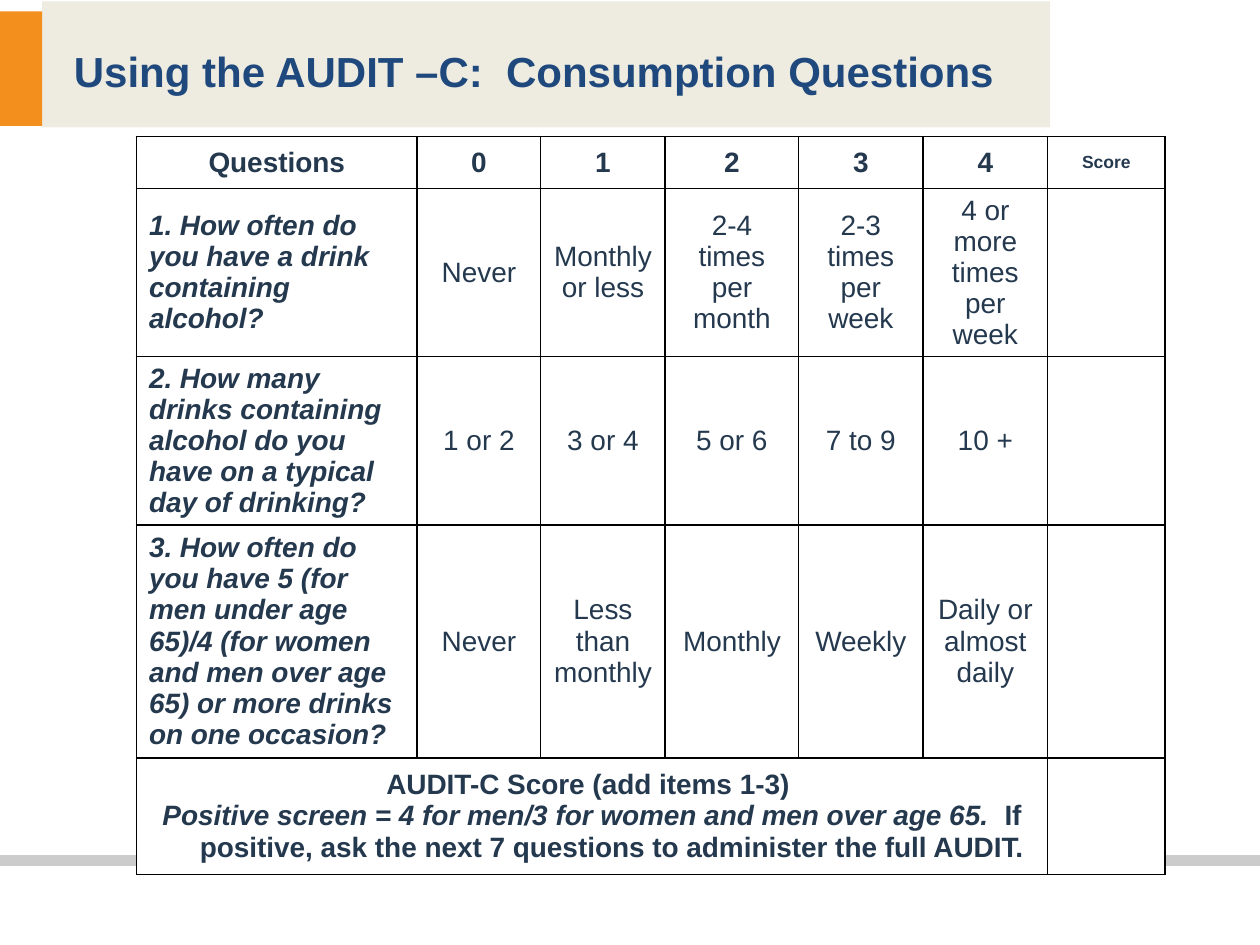
from lxml import etree
from pptx import Presentation
from pptx.dml.color import RGBColor
from pptx.enum.shapes import MSO_CONNECTOR, MSO_SHAPE
from pptx.enum.text import MSO_ANCHOR, MSO_AUTO_SIZE, PP_ALIGN
from pptx.oxml import parse_xml
from pptx.oxml.ns import nsdecls, qn
from pptx.util import Cm, Pt

LEFT, CENTER = PP_ALIGN.LEFT, PP_ALIGN.CENTER
MIDDLE = MSO_ANCHOR.MIDDLE
RECT, STRAIGHT = MSO_SHAPE.RECTANGLE, MSO_CONNECTOR.STRAIGHT
NO_FIT = MSO_AUTO_SIZE.NONE
FONT = "Arial"
HANG = Cm(0.81)
COLORS = {"rule": "CCCCCC", "mark": "F3901D", "band": "EEECE1",
          "title": "1F497D", "text": "24384E", "cell": "FFFFFF",
          "grid": "000000"}

COLS = [5.66, 2.49, 2.51, 2.69, 2.51, 2.51, 2.37]
ROWS = [1.05, 3.38, 3.38, 4.7, 2.35]
HEADS = ["Questions", "0", "1", "2", "3", "4", "Score"]
ITEMS = [
    ["1. How often do you have a drink containing alcohol?",
     "Never", "Monthly or less", "2-4 times per month",
     "2-3 times per week", "4 or more times per week"],
    ["2. How many drinks containing alcohol do you have on a typical "
     "day of drinking?",
     "1 or 2", "3 or 4", "5 or 6", "7 to 9", "10 +"],
    ["3. How often do you have 5 (for men under age 65)/4 (for women and "
     "men over age 65) or more drinks on one occasion?",
     "Never", "Less than monthly", "Monthly", "Weekly",
     "Daily or almost daily"],
]


def color(name):
    return RGBColor.from_string(COLORS[name])


def paint(shape, name):
    shape.fill.solid()
    shape.fill.fore_color.rgb = color(name)


def add_run(para, text, size=16, bold=False, italic=False, ink="text"):
    run = para.add_run()
    run.text = text
    font = run.font
    font.name, font.size = FONT, Pt(size)
    font.bold, font.italic = bold, italic
    font.color.rgb = color(ink)


def align(para, side, hang=False):
    para.alignment = side
    if hang:
        props = para._p.get_or_add_pPr()
        props.set("marL", str(HANG))
        props.set("indent", str(-HANG))


def style_cell(cell):
    """Give a cell its grid lines, white fill and middle anchor."""
    props = cell._tc.get_or_add_tcPr()
    for side in ("lnL", "lnR", "lnT", "lnB"):
        props.append(parse_xml(
            f'<a:{side} {nsdecls("a")} w="{Pt(1)}"><a:solidFill>'
            f'<a:srgbClr val="{COLORS["grid"]}"/></a:solidFill></a:{side}>'))
    paint(cell, "cell")
    cell.vertical_anchor = MIDDLE


def add_rule(slide, left, top, width):
    rule = slide.shapes.add_connector(STRAIGHT, left, top, left + width, top)
    rule.line.color.rgb = color("rule")
    rule.line.width = Pt(6)
    etree.SubElement(rule._element.spPr, qn("a:effectLst"))


def add_head(slide, left, top, width, height):
    """Place the orange mark and the title band beside it."""
    edge = Cm(0.85)
    mark = slide.shapes.add_shape(RECT, left, top + Cm(0.2), edge, Cm(2.31))
    mark.shadow.inherit = False
    mark.line.fill.background()
    paint(mark, "mark")

    title = slide.shapes.title
    title.left, title.top = left + edge, top
    title.width, title.height = width - edge, height
    paint(title, "band")
    frame = title.text_frame
    frame.auto_size, frame.word_wrap = NO_FIT, True
    frame.vertical_anchor = MIDDLE
    frame.margin_left, frame.margin_right = Cm(0.64), Cm(0.25)
    frame.margin_top = frame.margin_bottom = Cm(0.13)
    para = frame.paragraphs[0]
    align(para, LEFT)
    para.line_spacing = Pt(36)
    add_run(para, "Using the AUDIT –C:  Consumption Questions", 24, True,
            ink="title")


def add_total(cell):
    frame = cell.text_frame
    first, second = frame.paragraphs[0], frame.add_paragraph()
    for para in (first, second):
        align(para, CENTER, True)
    add_run(first, "AUDIT-C Score (add items 1-3) ", bold=True)
    add_run(second, "Positive screen = 4 for men/3 for women and men over "
            "age 65.  ", bold=True, italic=True)
    add_run(second, "If positive, ask the next 7 questions to administer "
            "the full AUDIT.", bold=True)


def add_grid(slide, left, top):
    frame = slide.shapes.add_table(len(ROWS), len(COLS), left, top,
                                   Cm(sum(COLS)), Cm(sum(ROWS)))
    table = frame.table
    table.first_row = table.horz_banding = False
    for col, width in zip(table.columns, COLS):
        col.width = Cm(width)
    for row, height in zip(table.rows, ROWS):
        row.height = Cm(height)
        for cell in row.cells:
            style_cell(cell)

    for c, text in enumerate(HEADS):
        para = table.cell(0, c).text_frame.paragraphs[0]
        align(para, CENTER, c > 0)
        add_run(para, text, 10 if text == "Score" else 16, True)
    for r, item in enumerate(ITEMS, 1):
        for c, text in enumerate(item):
            ask = c == 0
            para = table.cell(r, c).text_frame.paragraphs[0]
            align(para, LEFT if ask else CENTER, r == 2 and c > 1)
            add_run(para, text, bold=ask, italic=ask)

    last = len(ROWS) - 1
    total = table.cell(last, 0)
    total.merge(table.cell(last, len(COLS) - 2))
    add_total(total)


def main():
    deck = Presentation()
    deck.slide_width, deck.slide_height = Cm(25.4), Cm(19.05)
    slide = deck.slides.add_slide(deck.slide_layouts[5])
    add_rule(slide, Cm(0), Cm(17.35), deck.slide_width)
    add_head(slide, Cm(0), Cm(0.03), Cm(21.17), Cm(2.54))
    add_grid(slide, Cm(2.75), Cm(2.75))
    deck.save("out.pptx")


if __name__ == "__main__":
    main()
